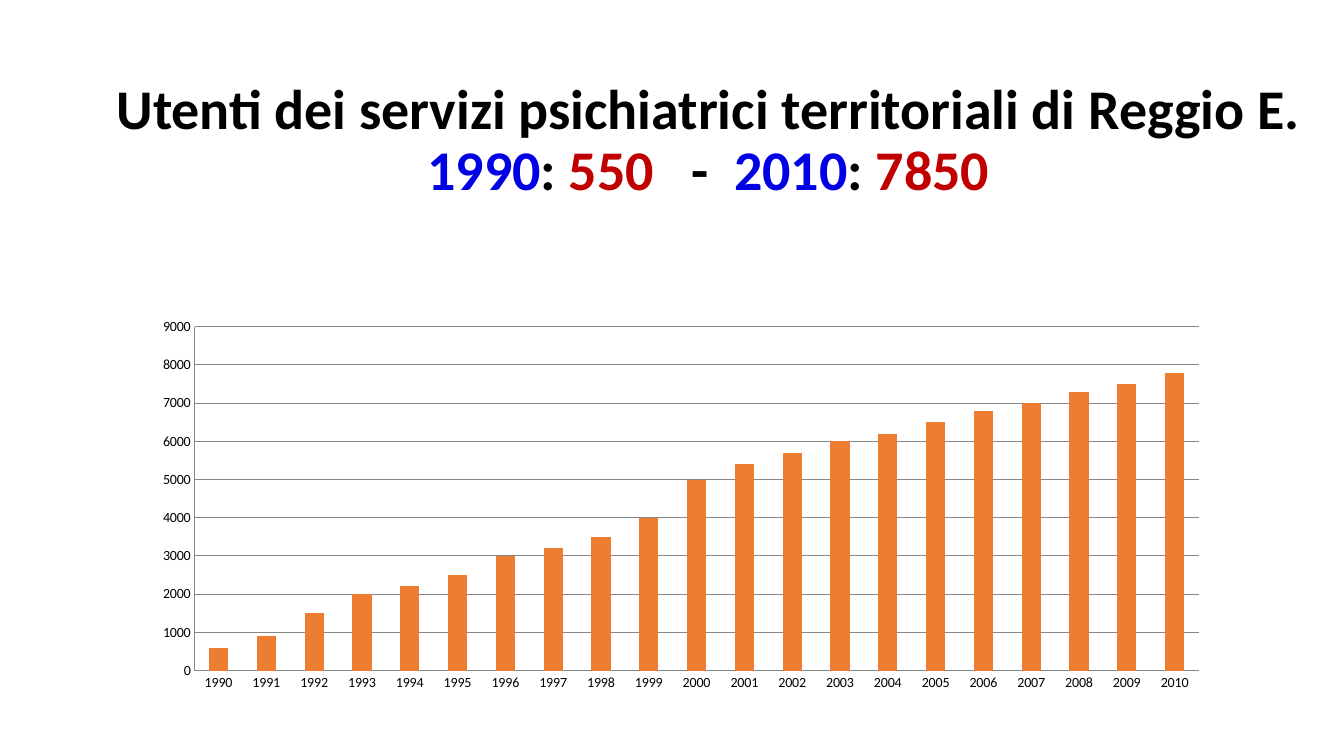
import pptx
import pptx.util
import pptx.dml.color
import pptx.chart.data
import pptx.enum.chart
import pptx.enum.text
import pptx.oxml
from dataclasses import dataclass

Pt = pptx.util.Pt
RGB = pptx.dml.color.RGBColor.from_string


@dataclass(frozen=True)
class Theme:
    font: str = "Calibri"
    ink: str = "000000"
    year: str = "0000E5"
    count: str = "C00000"
    bar: str = "ED7D31"
    grid: str = "878787"
    head: int = 40
    label: int = 10


class Page:
    def __init__(self, deck, theme):
        self.theme = theme
        self.slide = deck.slides.add_slide(deck.slide_layouts[5])

    def style(self, font, size, color, bold=False):
        font.name = self.theme.font
        font.size = Pt(size)
        font.bold = bold
        font.color.rgb = RGB(color)

    def title(self, box, lines):
        """Fill the title with lines, each a list of (text, colour) parts."""
        shape = self.slide.shapes.title
        shape.left, shape.top, shape.width, shape.height = map(Pt, box)
        frame = shape.text_frame
        frame.word_wrap = True
        frame.auto_size = pptx.enum.text.MSO_AUTO_SIZE.NONE
        frame.vertical_anchor = pptx.enum.text.MSO_ANCHOR.MIDDLE
        para = frame.paragraphs[0]
        para.alignment = pptx.enum.text.PP_ALIGN.CENTER
        para.line_spacing = 0.9
        for row, parts in enumerate(lines):
            if row:
                para.add_line_break()
            for text, color in parts:
                run = para.add_run()
                run.text = text
                self.style(run.font, self.theme.head, color, True)

    def axis(self, axis):
        axis.major_tick_mark = pptx.enum.chart.XL_TICK_MARK.NONE
        axis.minor_tick_mark = pptx.enum.chart.XL_TICK_MARK.NONE
        self.line(axis.format.line)

    def line(self, line):
        line.color.rgb = RGB(self.theme.grid)
        line.width = Pt(0.75)

    def columns(self, box, plot, name, cats, vals):
        """Add a column chart; plot is the inner area as x, y, w, h shares."""
        data = pptx.chart.data.CategoryChartData()
        data.categories = cats
        data.add_series(name, vals)
        kind = pptx.enum.chart.XL_CHART_TYPE.COLUMN_CLUSTERED
        frame = self.slide.shapes.add_chart(kind, *map(Pt, box), data)
        chart = frame.chart
        chart.has_title = False
        chart.has_legend = False
        self.style(chart.font, self.theme.label, self.theme.ink)
        bars = chart.plots[0]
        bars.gap_width = 150
        bars.vary_by_categories = False
        fill = bars.series[0].format.fill
        fill.solid()
        fill.fore_color.rgb = RGB(self.theme.bar)
        self.axis(chart.category_axis)
        scale = chart.value_axis
        self.axis(scale)
        scale.minimum_scale, scale.maximum_scale = 0, 9000
        scale.major_unit = 1000
        scale.has_major_gridlines = True
        self.line(scale.major_gridlines.format.line)
        self.place(chart, plot)

    def place(self, chart, plot):
        """Fix the inner plot area by hand."""
        tags = [("layoutTarget", "inner"), ("xMode", "edge"), ("yMode", "edge")]
        tags += zip("xywh", plot)
        body = "".join(f'<c:{tag} val="{val}"/>' for tag, val in tags)
        space = "http://schemas.openxmlformats.org/drawingml/2006/chart"
        layout = pptx.oxml.parse_xml(
            f'<c:layout xmlns:c="{space}"><c:manualLayout>{body}'
            "</c:manualLayout></c:layout>")
        area = chart.plots[0]._element.getparent()
        for old in area.findall(f"{{{space}}}layout"):
            area.remove(old)
        area.insert(0, layout)


def main():
    deck = pptx.Presentation()
    deck.slide_width, deck.slide_height = Pt(960), Pt(540)
    theme = Theme()
    page = Page(deck, theme)
    page.title((74.3, 9.8, 863.3, 183), [
        [("Utenti dei servizi psichiatrici territoriali di Reggio E.", theme.ink)],
        [("1990", theme.year), (": ", theme.ink), ("550", theme.count),
         ("   -  ", theme.ink),
         ("2010", theme.year), (": ", theme.ink), ("7850", theme.count)],
    ])
    users = [600, 900, 1500, 2000, 2200, 2500, 3000, 3200, 3500, 4000, 5000,
             5400, 5700, 6000, 6200, 6500, 6800, 7000, 7300, 7500, 7800]
    years = [str(1990 + step) for step in range(len(users))]
    page.columns((97, 168, 808.5, 335.5), (0.052, 0.195, 0.887, 0.732),
                 "Series 1", years, users)
    deck.save("out.pptx")


if __name__ == "__main__":
    main()
